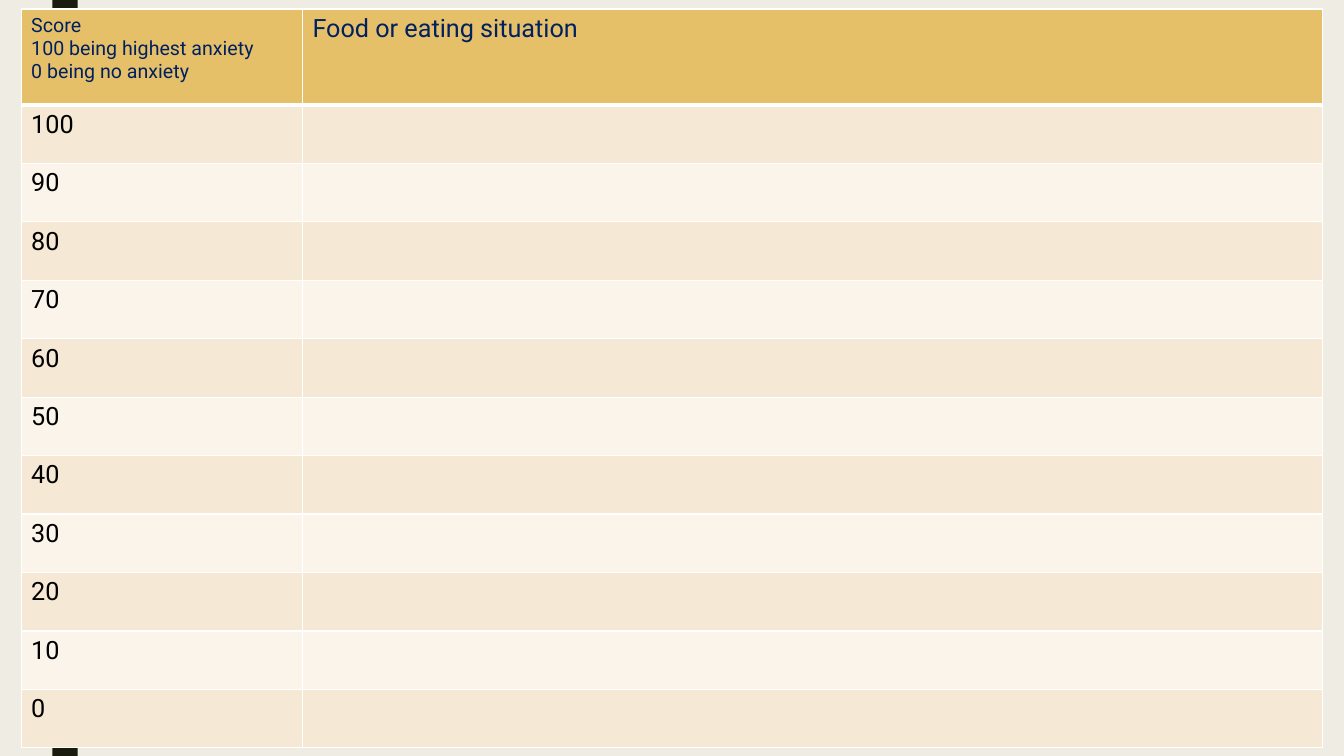
from lxml.etree import SubElement
from pptx import Presentation
from pptx.dml.color import RGBColor
from pptx.enum.shapes import MSO_SHAPE
from pptx.oxml.ns import qn
from pptx.util import Inches, Pt

# Content
HEADS = [
    ("Score\n100 being highest anxiety\n0 being no anxiety", 14),
    ("Food or eating situation", 18),
]
SCORES = range(100, -1, -10)
COLS = [2.79, 10.12]
HEAD_H, ROW_H = 0.95, 0.58
COLOURS = {
    "page": "EFEDE3", "bar": "191B0E", "head": "E6C069", "dark": "F5E8D4",
    "light": "FAF4EB", "navy": "002060", "black": "000000", "line": "FFFFFF",
}


def rgb(name):
    return RGBColor.from_string(COLOURS[name])


def draw_edges(cell, low):
    """Draw the four borders; low is the width of the bottom one in points."""
    props = cell._tc.get_or_add_tcPr()
    for side, width in (("L", 1), ("R", 1), ("T", 1), ("B", low)):
        edge = SubElement(props, qn(f"a:ln{side}"), w=str(Pt(width)))
        fill = SubElement(edge, qn("a:solidFill"))
        SubElement(fill, qn("a:srgbClr"), val=COLOURS["line"])


def style_cell(cell, text, size, ink, back, low=1):
    draw_edges(cell, low)
    cell.fill.solid()
    cell.fill.fore_color.rgb = rgb(back)
    cell.text = text
    for para in cell.text_frame.paragraphs:
        para.font.name = "Roboto"
        para.font.size = Pt(size)
        para.font.bold = False
        para.font.color.rgb = rgb(ink)


deck = Presentation()
deck.slide_width, deck.slide_height = Inches(13.33), Inches(7.5)
slide = deck.slides.add_slide(deck.slide_layouts[6])
slide.background.fill.solid()
slide.background.fill.fore_color.rgb = rgb("page")

# Bar behind the table
bar = slide.shapes.add_shape(
    MSO_SHAPE.RECTANGLE, Inches(0.52), 0, Inches(0.25), Inches(7.5))
bar.shadow.inherit = False
bar.fill.solid()
bar.fill.fore_color.rgb = rgb("bar")
bar.line.fill.background()

# Table frame
count = len(SCORES)
table = slide.shapes.add_table(
    count + 1, len(COLS), Inches(0.21), Inches(0.09),
    Inches(sum(COLS)), Inches(HEAD_H + count * ROW_H)).table
for col, width in zip(table.columns, COLS):
    col.width = Inches(width)
for i, row in enumerate(table.rows):
    row.height = Inches(ROW_H if i else HEAD_H)

# Header row
for c, (text, size) in enumerate(HEADS):
    style_cell(table.cell(0, c), text, size, "navy", "head", 3)

# Score rows
for r, score in enumerate(SCORES, 1):
    back = "dark" if r % 2 else "light"
    for c, text in enumerate((str(score), "")):
        style_cell(table.cell(r, c), text, 18, "black", back)

deck.save("out.pptx")
